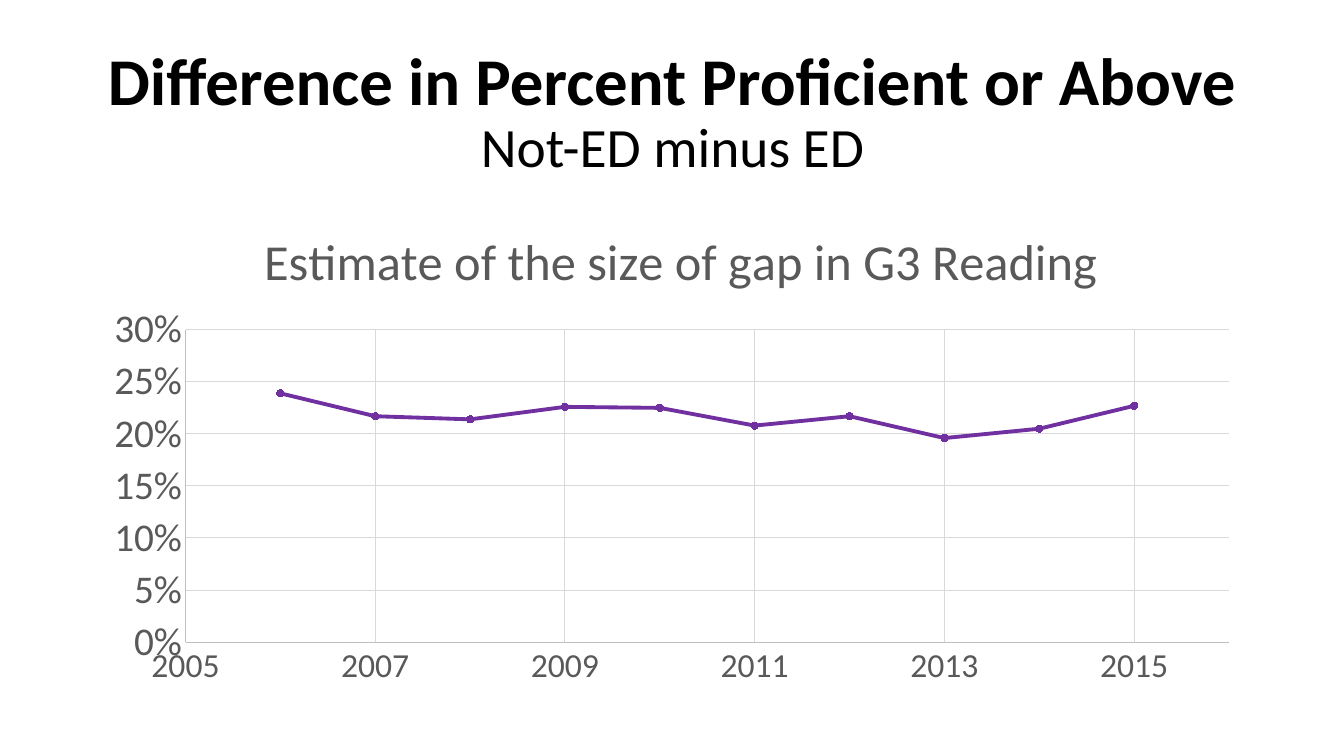
import pptx
import pptx.chart.data
import pptx.dml.color
import pptx.enum.chart
import pptx.enum.text
import pptx.oxml
import pptx.oxml.ns
import pptx.util
from pptx.util import Inches

RGBColor = pptx.dml.color.RGBColor
BLACK = RGBColor(0x00, 0x00, 0x00)
GRAY = RGBColor(0x59, 0x59, 0x59)
AXIS = RGBColor(0xBF, 0xBF, 0xBF)
GRID = RGBColor(0xD9, 0xD9, 0xD9)
PURPLE = RGBColor(0x70, 0x30, 0xA0)
FONT = "Calibri"
GAPS = [0.239, 0.217, 0.214, 0.226, 0.225, 0.208, 0.217, 0.196, 0.205, 0.227]


def set_font(font, size, color, bold=False):
    font.name = FONT
    font.size = pptx.util.Pt(size)
    font.color.rgb = color
    font.bold = bold


def make_layout(**settings):
    """Build a manual chart layout from its settings, in schema order."""
    items = "".join(f'<c:{k} val="{v}"/>' for k, v in settings.items())
    return pptx.oxml.parse_xml(
        f'<c:layout {pptx.oxml.ns.nsdecls("c")}>'
        f"<c:manualLayout>{items}</c:manualLayout></c:layout>")


prs = pptx.Presentation()
prs.slide_width = Inches(13.33)
prs.slide_height = Inches(7.5)
s = prs.slides.add_slide(prs.slide_layouts[5])

# Title
title = s.shapes.title
title.left, title.top = Inches(0.92), Inches(0.4)
title.width, title.height = Inches(11.5), Inches(1.45)
tf = title.text_frame
tf.word_wrap = True
tf.auto_size = pptx.enum.text.MSO_AUTO_SIZE.NONE
tf.vertical_anchor = pptx.enum.text.MSO_ANCHOR.MIDDLE
p = tf.paragraphs[0]
p.alignment = pptx.enum.text.PP_ALIGN.CENTER
p.line_spacing = 0.9
r = p.add_run()
r.text = "Difference in Percent Proficient or Above"
set_font(r.font, 47.7, BLACK, bold=True)
p.add_line_break()
r = p.add_run()
r.text = "Not-ED minus ED"
set_font(r.font, 39.6, BLACK)

# Chart of the yearly gap
data = pptx.chart.data.XyChartData()
gap_data = data.add_series("Series 1")
for year, gap in enumerate(GAPS, start=2006):
    gap_data.add_data_point(year, gap)
chart = s.shapes.add_chart(
    pptx.enum.chart.XL_CHART_TYPE.XY_SCATTER_LINES,
    Inches(0.92), Inches(1.85), Inches(11.5), Inches(5.08), data).chart
set_font(chart.font, 10, BLACK)
chart.has_legend = False
plot = chart.plots[0]
plot.vary_by_categories = False

# Chart title
chart.has_title = True
p = chart.chart_title.text_frame.paragraphs[0]
p.text = "Estimate of the size of gap in G3 Reading"
set_font(p.font, 36, GRAY)
chart.chart_title.include_in_layout = False

# Places of the chart title and plot area
for tag, layout in (
    ("c:title", make_layout(xMode="edge", yMode="edge", x=0.14, y=0.06)),
    ("c:plotArea", make_layout(layoutTarget="inner", xMode="edge", yMode="edge",
                               x=0.08, y=0.28, w=0.9, h=0.61)),
):
    part = chart.element.find(".//" + pptx.oxml.ns.qn(tag))
    old = part.find(pptx.oxml.ns.qn("c:layout"))
    if old is not None:
        part.remove(old)
    part.insert(1 if tag == "c:title" else 0, layout)

# Axes
for axis, low, high, step, size, fmt in (
    (chart.category_axis, 2005, 2016, 2, 24, "General"),
    (chart.value_axis, 0, 0.3, 0.05, 28, "0%"),
):
    axis.minimum_scale, axis.maximum_scale = low, high
    axis.major_unit = step
    axis.major_tick_mark = pptx.enum.chart.XL_TICK_MARK.NONE
    axis.minor_tick_mark = pptx.enum.chart.XL_TICK_MARK.NONE
    axis.has_major_gridlines = True
    for line, color in ((axis.format.line, AXIS),
                        (axis.major_gridlines.format.line, GRID)):
        line.color.rgb = color
        line.width = pptx.util.Pt(0.75)
    set_font(axis.tick_labels.font, size, GRAY)
    axis.tick_labels.number_format = fmt
    axis.tick_labels.number_format_is_linked = False

# Line and markers
series = plot.series[0]
series.smooth = False
series.format.line.color.rgb = PURPLE
series.format.line.width = pptx.util.Pt(2.75)
series.marker.style = pptx.enum.chart.XL_MARKER_STYLE.CIRCLE
series.marker.size = 5
series.marker.format.fill.solid()
series.marker.format.fill.fore_color.rgb = PURPLE
series.marker.format.line.color.rgb = PURPLE

prs.save("out.pptx")
